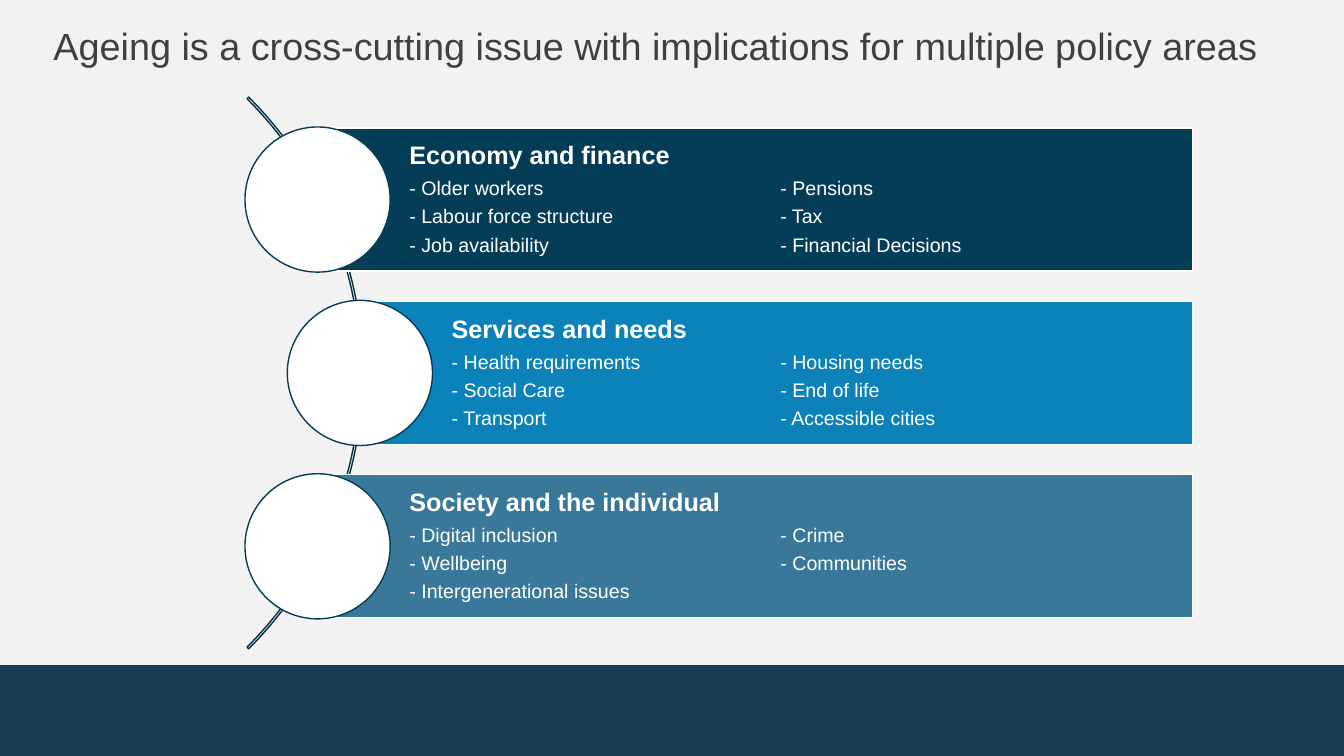
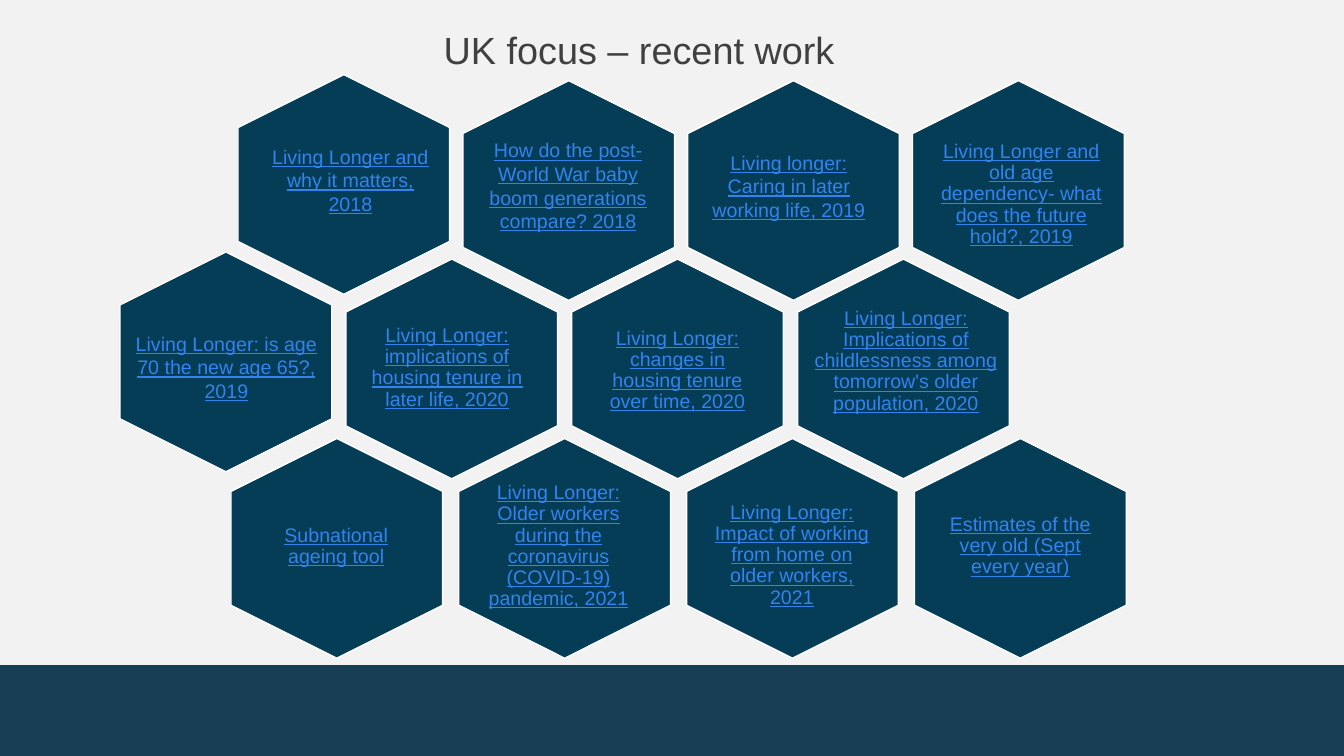
from dataclasses import dataclass

from lxml import etree
from pptx import Presentation
from pptx.dml.color import RGBColor
from pptx.enum.shapes import MSO_SHAPE as Preset
from pptx.enum.text import MSO_ANCHOR as Anchor, MSO_AUTO_SIZE as AutoSize, PP_ALIGN as Align
from pptx.oxml.ns import qn
from pptx.presentation import Presentation as Deck
from pptx.shapes.autoshape import Shape
from pptx.slide import Slide
from pptx.text.text import TextFrame, _Paragraph as Paragraph
from pptx.util import Inches, Pt

FONT = "Arial"
PAGE, FOOTER, TITLE = "F2F2F2", "183E56", "414041"
NAVY, BLUE, STEEL, ARC = "053D57", "0B82BA", "3A7899", "043146"
WHITE, LINK = "FFFFFF", "3383EF"

WIDTH, HEIGHT, FOOTER_HEIGHT = 13.33, 7.5, 0.9
BAND_TOP, BAND_PITCH, BAND_HEIGHT, BAND_RIGHT = 1.27, 1.72, 1.42, 11.83
BAND_INDENT, SECOND_COLUMN, CIRCLE = 0.91, 7.74, 1.44
HEX_WIDTH, HEX_HEIGHT = 2.18, 2.1


@dataclass(frozen=True)
class Box:
    left: float
    top: float
    width: float
    height: float


@dataclass(frozen=True)
class PolicyArea:
    heading: str
    colour: str
    left: float
    topics: tuple[tuple[str, str], ...]


@dataclass(frozen=True)
class Publication:
    title: str
    label: Box
    spacing: float = 0.9


@dataclass(frozen=True)
class HexRow:
    left: float
    top: float
    pitch: float
    first_lift: float
    publications: tuple[Publication, ...]


POLICY_AREAS = (
    PolicyArea("Economy and finance", NAVY, 3.15, (
        ("Older workers", "Pensions"),
        ("Labour force structure", "Tax"),
        ("Job availability", "Financial Decisions"),
    )),
    PolicyArea("Services and needs", BLUE, 3.57, (
        ("Health requirements", "Housing needs"),
        ("Social Care", "End of life"),
        ("Transport", "Accessible cities"),
    )),
    PolicyArea("Society and the individual", STEEL, 3.15, (
        ("Digital inclusion", "Crime"),
        ("Wellbeing", "Communities"),
        ("Intergenerational issues", ""),
    )),
)

HEX_ROWS = (
    HexRow(2.32, 0.84, 2.23, 0.06, (
        Publication("Living Longer and why it matters, 2018", Box(2.67, 1.43, 1.61, 0.71), 1),
        Publication("How do the post-World War baby boom generations compare? 2018",
                    Box(4.73, 1.37, 1.81, 0.94), 1),
        Publication("Living longer: Caring in later working life, 2019",
                    Box(6.96, 1.49, 1.73, 0.71), 1),
        Publication("Living Longer and old age dependency- what does the future hold?, 2019",
                    Box(9.22, 1.18, 1.82, 1.5)),
    )),
    HexRow(1.15, 2.61, 2.24, 0.07, (
        Publication("Living Longer: is age 70 the new age 65?, 2019",
                    Box(1.34, 2.89, 1.81, 1.5), 1),
        Publication("Living Longer: implications of housing tenure in later life, 2020",
                    Box(3.57, 2.9, 1.73, 1.5)),
        Publication("Living Longer: changes in housing tenure over time, 2020",
                    Box(5.92, 3.08, 1.6, 1.19)),
        Publication("Living Longer: Implications of childlessness among tomorrow's older population, 2020",
                    Box(7.99, 2.97, 1.99, 1.23)),
    )),
    HexRow(2.25, 4.39, 2.26, 0, (
        Publication("Subnational ageing tool", Box(2.61, 4.67, 1.45, 1.5)),
        Publication("Living Longer: Older workers during the coronavirus (COVID-19) pandemic, 2021",
                    Box(4.68, 4.67, 1.72, 1.5)),
        Publication("Living Longer: Impact of working from home on older workers, 2021",
                    Box(7.04, 4.76, 1.63, 1.5)),
        Publication("Estimates of the very old (Sept every year)", Box(9.27, 4.67, 1.7, 1.5)),
    )),
)


def rgb(colour: str) -> RGBColor:
    return RGBColor.from_string(colour)


def inches(box: Box) -> tuple[Inches, Inches, Inches, Inches]:
    return Inches(box.left), Inches(box.top), Inches(box.width), Inches(box.height)


def set_margins(frame: TextFrame, left: float = 0, other: float = 0) -> None:
    frame.margin_left = Inches(left)
    frame.margin_top = frame.margin_right = frame.margin_bottom = Inches(other)


def style(paragraph: Paragraph, size: float, colour: str, spacing: float,
          bold: bool = False, underline: bool = False) -> None:
    paragraph.line_spacing = spacing
    for run in paragraph.runs:
        run.font.name = FONT
        run.font.size = Pt(size)
        run.font.bold = bold
        run.font.underline = underline
        run.font.color.rgb = rgb(colour)


def add_preset(slide: Slide, preset: Preset, box: Box, fill: str | None, line: str | None) -> Shape:
    shape = slide.shapes.add_shape(preset, *inches(box))
    shape.shadow.inherit = False
    if fill:
        shape.fill.solid()
        shape.fill.fore_color.rgb = rgb(fill)
    else:
        shape.fill.background()
    if line:
        shape.line.color.rgb = rgb(line)
        shape.line.width = Pt(1)
    else:
        shape.line.fill.background()
    return shape


def add_titled_slide(deck: Deck, text: str, box: Box) -> Slide:
    slide = deck.slides.add_slide(deck.slide_layouts[5])
    title = slide.shapes.title
    title.left, title.top, title.width, title.height = inches(box)
    frame = title.text_frame
    frame.text = text
    frame.word_wrap = True
    frame.auto_size = AutoSize.SHAPE_TO_FIT_TEXT
    frame.vertical_anchor = Anchor.TOP
    set_margins(frame)
    heading = frame.paragraphs[0]
    heading.alignment = Align.LEFT
    heading.space_after = Pt(7.5)
    style(heading, 27, TITLE, 0.95)
    return slide


def set_up_master(deck: Deck, slide: Slide) -> None:
    master = deck.slide_master
    master.background.fill.solid()
    master.background.fill.fore_color.rgb = rgb(PAGE)
    footer = add_preset(slide, Preset.RECTANGLE,
                        Box(0, HEIGHT - FOOTER_HEIGHT, WIDTH, FOOTER_HEIGHT), FOOTER, None)
    master.shapes.element.insert(2, footer.element)


def add_tab_stop(paragraph: Paragraph, position: float) -> None:
    stops = etree.SubElement(paragraph._p.get_or_add_pPr(), qn("a:tabLst"))
    etree.SubElement(stops, qn("a:tab"), pos=str(Inches(position)), algn="l")


def add_policy_area(slide: Slide, area: PolicyArea, top: float) -> None:
    band = add_preset(slide, Preset.RECTANGLE,
                      Box(area.left, top, BAND_RIGHT - area.left, BAND_HEIGHT), area.colour, WHITE)
    frame = band.text_frame
    frame.word_wrap = True
    frame.vertical_anchor = Anchor.MIDDLE
    set_margins(frame, BAND_INDENT, 0.05)
    topics = [f"- {first}\t- {second}" if second else f"- {first}" for first, second in area.topics]
    frame.text = "\n".join([area.heading, *topics])
    for index, paragraph in enumerate(frame.paragraphs):
        size = 14 if index else 18
        add_tab_stop(paragraph, SECOND_COLUMN - area.left - BAND_INDENT)
        paragraph.alignment = Align.LEFT
        paragraph.space_after = Pt(size * 0.35)
        style(paragraph, size, WHITE, 0.9, bold=index == 0)
    circle_top = top + (BAND_HEIGHT - CIRCLE) / 2
    add_preset(slide, Preset.OVAL, Box(area.left - CIRCLE / 2, circle_top, CIRCLE, CIRCLE), WHITE, NAVY)


def add_hexagon(slide: Slide, left: float, top: float) -> None:
    hexagon = add_preset(slide, Preset.HEXAGON, Box(left, top, HEX_WIDTH, HEX_HEIGHT), NAVY, WHITE)
    hexagon.adjustments[0] = 0.25
    hexagon.adjustments[1] = 1.1547
    hexagon.rotation = 90


def add_publication(slide: Slide, publication: Publication) -> None:
    frame = slide.shapes.add_textbox(*inches(publication.label)).text_frame
    frame.text = publication.title
    frame.word_wrap = True
    frame.vertical_anchor = Anchor.MIDDLE
    set_margins(frame)
    label = frame.paragraphs[0]
    label.alignment = Align.CENTER
    style(label, 14, LINK, publication.spacing, underline=True)


def build_policy_slide(deck: Deck) -> Slide:
    slide = add_titled_slide(
        deck, "Ageing is a cross-cutting issue with implications for multiple policy areas",
        Box(0.53, 0.26, 12.27, 0.43))
    arc = add_preset(slide, Preset.BLOCK_ARC, Box(-4.14, -0.17, 7.74, 7.74), None, ARC)
    for index, value in enumerate((189, 27, 0.003)):
        arc.adjustments[index] = value
    for index, area in enumerate(POLICY_AREAS):
        add_policy_area(slide, area, BAND_TOP + index * BAND_PITCH)
    return slide


def build_publications_slide(deck: Deck) -> None:
    slide = add_titled_slide(deck, "UK focus – recent work", Box(4.4, 0.3, 8.62, 0.43))
    for row in HEX_ROWS:
        for index, publication in enumerate(row.publications):
            lift = 0 if index else row.first_lift
            add_hexagon(slide, row.left + index * row.pitch, row.top - lift)
            add_publication(slide, publication)


def main() -> None:
    deck = Presentation()
    deck.slide_width, deck.slide_height = Inches(WIDTH), Inches(HEIGHT)
    set_up_master(deck, build_policy_slide(deck))
    build_publications_slide(deck)
    deck.save("out.pptx")


if __name__ == "__main__":
    main()
